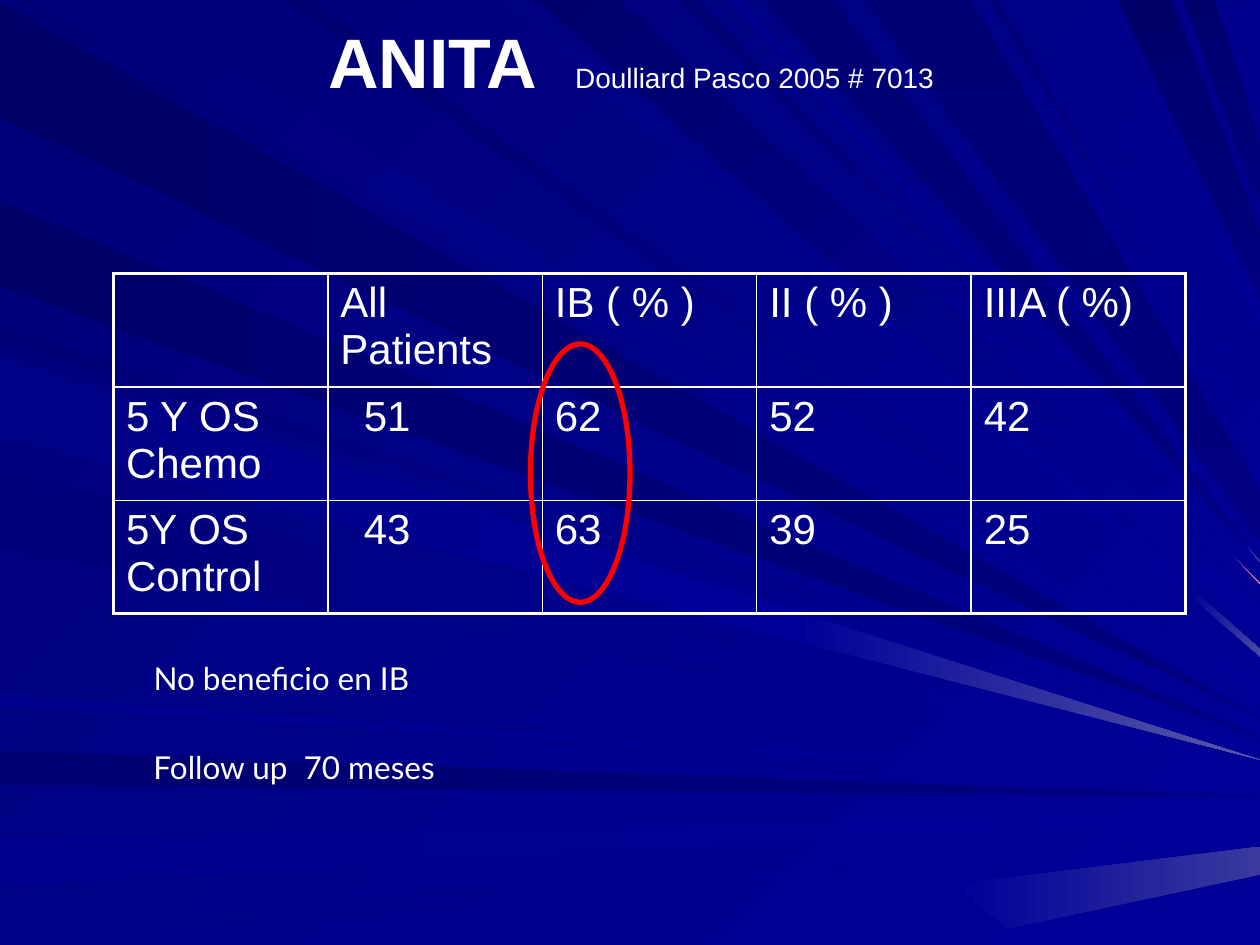
from typing import NamedTuple

from lxml.etree import SubElement
from pptx import Presentation
from pptx.dml.color import RGBColor
from pptx.enum.shapes import MSO_SHAPE
from pptx.enum.text import MSO_ANCHOR, PP_ALIGN
from pptx.oxml.ns import qn
from pptx.util import Cm, Pt

INCH = 2.54
WIDE, HIGH = 10, 7.5
WHITE = "FFFFFF"
NAVY, BLUE = "000080", "000099"


class Ray(NamedTuple):
    """A beam from start..stop on the left or top edge to tip on the right edge."""
    edge: str
    start: float
    stop: float
    tip: float
    dark: str
    light: str = BLUE
    spread: float = 0
    split: float = 1
    glow: str = ""


class Note(NamedTuple):
    text: str
    top: float
    width: float


RAYS = [
    Ray("left", 0.02, 0.93, 5.7, "000069", NAVY),
    Ray("top", 0.26, 1.01, 5.63, "00007B"),
    Ray("left", 5.96, 6.23, 6.32, "000071", NAVY),
    Ray("left", 6.65, 7.04, 6.47, "00008C"),
    Ray("left", 7.35, 7.5, 6.62, "000085"),
    Ray("left", 2.58, 2.7, 5.89, "000076"),
    Ray("left", 1.59, 2.28, 5.85, "00006B", NAVY),
    Ray("top", 3.98, 4.16, 5.15, "000083", spread=0.06, split=0.91, glow="4A4AA1"),
    Ray("top", 4.26, 4.92, 4.79, "00006D", spread=0.28),
    Ray("top", 5.4, 5.52, 4.63, "000073", split=0.95, glow="FF9999"),
    Ray("top", 6.06, 6.61, 4.46, "000073", NAVY, split=0.97, glow="5A5AA6"),
    Ray("top", 8.87, 9.3, 1.83, "00006B", NAVY, spread=0.54),
    Ray("top", 9.39, 9.64, 1.14, "00006D", NAVY, spread=0.53),
    Ray("left", 2.78, 3.42, 6, "00007E"),
    Ray("left", 3.74, 4.37, 6.06, "00007B"),
    Ray("left", 5.52, 5.6, 6.22, "00008E"),
    Ray("top", 2.25, 2.47, 5.47, "000070", spread=0.05),
    Ray("top", 5.77, 5.88, 4.54, "00008E"),
    Ray("top", 6.86, 7.7, 3.9, "000073", NAVY, spread=0.38),
    Ray("top", 7.85, 7.92, 3.54, "000078", spread=0.06),
    Ray("top", 8.15, 8.24, 3.36, "000085"),
    Ray("top", 8.65, 8.72, 2.49, "00008A", spread=0.09),
    Ray("left", 2.83, 3.47, 6.03, "000085", split=0.63, glow="5A5AA6"),
]
BEAM = [(7.56, 7.02), (WIDE, 6.72), (WIDE, 6.94), (8, 7.37)]

ROWS = [
    ["", "All Patients", "IB ( % )", "II ( % )", "IIIA ( %)"],
    ["5 Y OS\nChemo", "51", "62", "52", "42"],
    ["5Y OS\nControl", "43", "63", "39", "25"],
]

NOTES = [
    Note("No beneficio en IB", 5.18, 3.25),
    Note("Follow up  70 meses", 5.89, 2.46),
]


def cm(*inches: float) -> list:
    return [Cm(n * INCH) for n in inches]


def tint(code: str) -> RGBColor:
    return RGBColor.from_string(code)


def style(font, name: str, size: float) -> None:
    font.name, font.size = name, Pt(size)
    font.color.rgb = tint(WHITE)


def blend(fill, dark: str, light: str, angle: int) -> None:
    """Fill with a two-stop gradient turned clockwise."""
    fill.gradient()
    fill.gradient_angle = (360 - angle) % 360
    for stop, code in zip(fill.gradient_stops, (dark, light)):
        stop.color.rgb = tint(code)


def draw_shard(shapes, points: list, dark: str, light: str, angle: int) -> None:
    first, *rest = [cm(*point) for point in points]
    pen = shapes.build_freeform(*first)
    pen.add_line_segments(rest, close=True)
    shape = pen.convert_to_shape()
    shape.shadow.inherit = False
    shape.line.fill.background()
    blend(shape.fill, dark, light, angle)


def between(start: tuple, end: tuple, share: float) -> tuple:
    return tuple(a + (b - a) * share for a, b in zip(start, end))


def draw_ray(shapes, ray: Ray) -> None:
    left = ray.edge == "left"
    roots = [(0, n) if left else (n, 0) for n in (ray.start, ray.stop)]
    tips = [(WIDE, ray.tip + ray.spread), (WIDE, ray.tip)]
    mids = [between(a, b, ray.split) for a, b in zip(roots, tips)]
    angle = 0 if left else 90 if ray.light == NAVY else 45
    draw_shard(shapes, roots + mids[::-1], ray.dark, ray.light, angle)
    if ray.glow:
        draw_shard(shapes, mids + tips[::-1], BLUE, ray.glow, 0 if left else 45)


def draw_edge(cell, side: str, width: float) -> None:
    line = SubElement(cell._tc.get_or_add_tcPr(), qn(f"a:ln{side}"), w=str(Pt(width)))
    fill = SubElement(line, qn("a:solidFill"))
    SubElement(fill, qn("a:srgbClr"), val=WHITE)


def draw_table(shapes) -> None:
    high, wide = len(ROWS), len(ROWS[0])
    table = shapes.add_table(high, wide, *cm(0.9, 2.17, 8.51, 2.53)).table
    table.first_row = table.horz_banding = False
    for r, row in enumerate(ROWS):
        for c, text in enumerate(row):
            cell = table.cell(r, c)
            cell.text = text
            for part in cell.text_frame.paragraphs:
                if c == 1 and r:
                    part._p.get_or_add_pPr().set("marL", str(Cm(0.47)))
                style(part.font, "Arial", 24)
            outer = {"L": c == 0, "R": c == wide - 1, "T": r == 0, "B": r == high - 1}
            for side, thick in outer.items():
                draw_edge(cell, side, 2.25 if thick else 1)
            cell.fill.background()


def draw_title(shapes) -> None:
    frame = shapes.add_textbox(*cm(0.51, 0, 9, 0.91)).text_frame
    frame.word_wrap = True
    frame.vertical_anchor = MSO_ANCHOR.MIDDLE
    line = frame.paragraphs[0]
    line.alignment = PP_ALIGN.CENTER
    for text, size, bold in [("ANITA ", 40, True), (" ", 44, False),
                             ("Doulliard Pasco 2005 # 7013", 16, False)]:
        run = line.add_run()
        run.text = text
        style(run.font, "Arial", size)
        run.font.bold = bold


def draw_ring(shapes) -> None:
    ring = shapes.add_shape(MSO_SHAPE.OVAL, *cm(4.21, 2.73, 0.79, 2.05))
    ring.shadow.inherit = False
    ring.fill.background()
    ring.line.color.rgb = tint("FF0000")
    ring.line.width = Pt(3)


def draw_note(shapes, note: Note) -> None:
    frame = shapes.add_textbox(*cm(1.12, note.top, note.width, 0.4)).text_frame
    frame.word_wrap = True
    frame.text = note.text
    style(frame.paragraphs[0].font, "Lato", 18)


def main() -> None:
    deck = Presentation()
    deck.slide_width, deck.slide_height = cm(WIDE, HIGH)
    slide = deck.slides.add_slide(deck.slide_layouts[6])
    blend(slide.background.fill, "000078", BLUE, 45)
    shapes = slide.shapes
    draw_shard(shapes, BEAM, BLUE, "39399E", 0)
    for ray in RAYS:
        draw_ray(shapes, ray)
    draw_title(shapes)
    draw_table(shapes)
    draw_ring(shapes)
    for note in NOTES:
        draw_note(shapes, note)
    deck.save("out.pptx")


if __name__ == "__main__":
    main()
